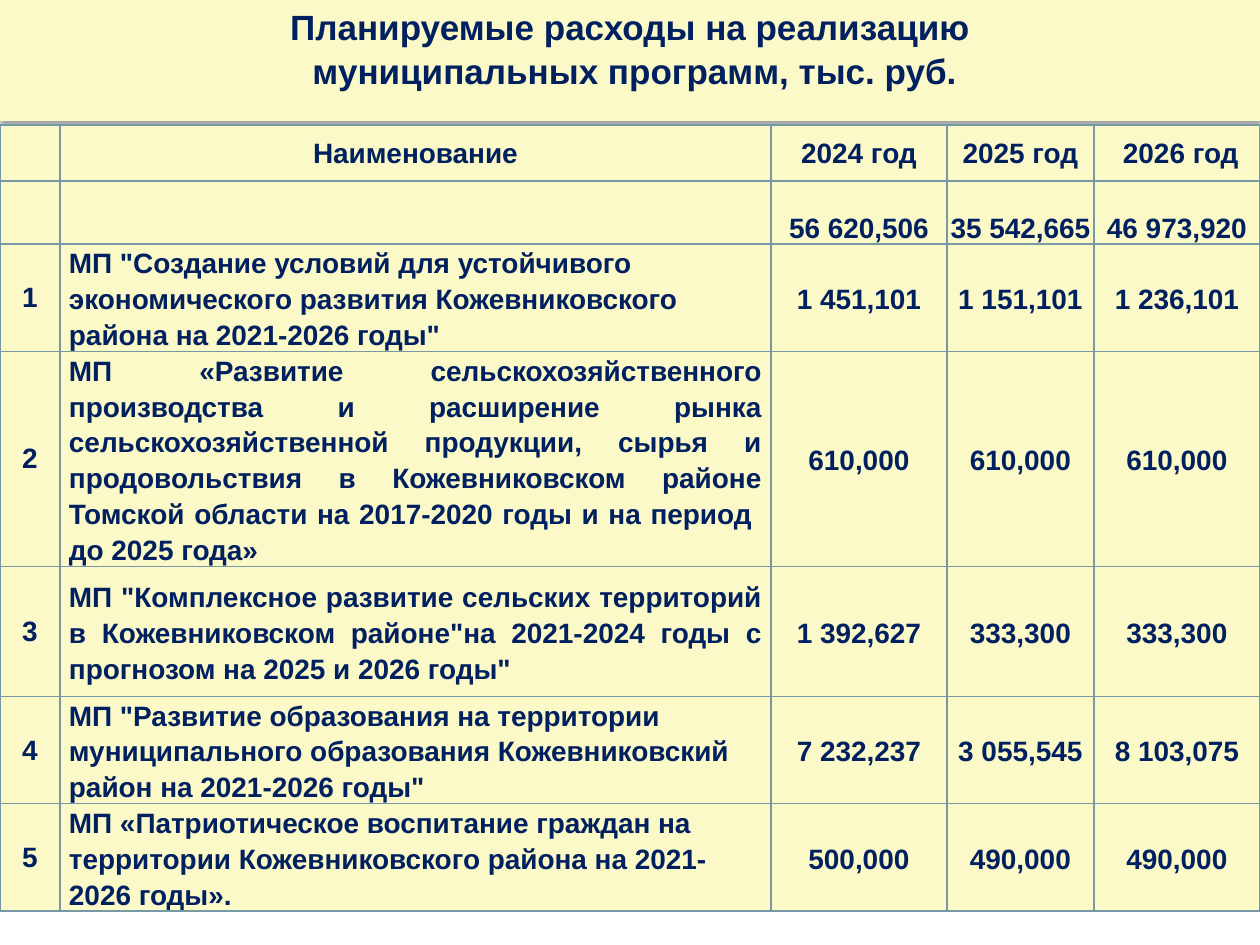
from lxml.etree import SubElement
from pptx import Presentation
from pptx.dml.color import RGBColor
from pptx.enum.text import MSO_ANCHOR, MSO_AUTO_SIZE, PP_ALIGN
from pptx.oxml import parse_xml
from pptx.oxml.ns import nsdecls, qn
from pptx.util import Pt

HUE = {"cream": "FCF9C8", "navy": "002060", "edge": "759AA5", "black": "000000"}
SCALE = 914400 / 126


def px(n):
    return round(n * SCALE)


def write(para, text, size, align, space=None):
    para.alignment = align
    if space:
        para.line_spacing = space
    run = para.add_run()
    run.text = text
    run.font.name = "Arial"
    run.font.size = Pt(size)
    run.font.bold = True
    run.font.color.rgb = RGBColor.from_string(HUE["navy"])


deck = Presentation()
deck.slide_width, deck.slide_height = px(1260), px(945)
slide = deck.slides.add_slide(deck.slide_layouts[5])

title = slide.shapes.title
title.left, title.top, title.width, title.height = px(0), px(-4), px(1260), px(125)
title.fill.solid()
title.fill.fore_color.rgb = RGBColor.from_string(HUE["cream"])
title._element.spPr.append(parse_xml(
    f'<a:effectLst {nsdecls("a")}>'
    f'<a:outerShdw blurRad="{Pt(3.1)}" dist="{Pt(2)}" dir="5400000" rotWithShape="0">'
    f'<a:srgbClr val="{HUE["black"]}"><a:alpha val="38000"/></a:srgbClr>'
    '</a:outerShdw></a:effectLst>'))
frame = title.text_frame
frame.auto_size = MSO_AUTO_SIZE.NONE
frame.vertical_anchor = MSO_ANCHOR.TOP
frame.margin_top = px(7)
lines = ["Планируемые расходы на реализацию", " муниципальных программ, тыс. руб."]
for i, line in enumerate(lines):
    para = frame.add_paragraph() if i else frame.paragraphs[0]
    write(para, line, 20, PP_ALIGN.CENTER, 1.05)

rows = [
    ["", "Наименование", "2024 год", "2025 год", " 2026 год"],
    ["", "", "56 620,506", "35 542,665", "46 973,920"],
    ["1", "МП \"Создание условий для устойчивого экономического развития "
     "Кожевниковского района на 2021-2026 годы\"",
     "1 451,101", "1 151,101", "1 236,101"],
    ["2", "МП «Развитие сельскохозяйственного производства и расширение рынка "
     "сельскохозяйственной продукции, сырья и продовольствия в Кожевниковском "
     "районе Томской области на 2017-2020 годы и на период  до 2025 года»",
     "610,000", "610,000", "610,000"],
    ["3", "МП \"Комплексное развитие сельских территорий в Кожевниковском "
     "районе\"на 2021-2024 годы с прогнозом на 2025 и 2026 годы\"",
     "1 392,627", "333,300", "333,300"],
    ["4", "МП \"Развитие образования на территории муниципального образования "
     "Кожевниковский район на 2021-2026 годы\"",
     "7 232,237", "3 055,545", "8 103,075"],
    ["5", "МП «Патриотическое воспитание граждан на территории "
     "Кожевниковского района на 2021-2026 годы».",
     "500,000", "490,000", "490,000"],
]
wide = [60, 711, 176, 147, 166]
high = [56, 63, 107, 215, 130, 107, 107]
grid = slide.shapes.add_table(len(rows), len(wide), px(0), px(125),
                              px(sum(wide)), px(sum(high))).table
grid.first_row = False
grid.horz_banding = False
for col, width in zip(grid.columns, wide):
    col.width = px(width)
for row, height in zip(grid.rows, high):
    row.height = px(height)

for r, row in enumerate(rows):
    for c, text in enumerate(row):
        cell = grid.cell(r, c)
        body = r > 1 and c > 0
        cell.margin_left = cell.margin_right = px(9 if body else 1)
        cell.margin_top = px(0 if body else 1)
        cell.margin_bottom = px(0)
        cell.vertical_anchor = MSO_ANCHOR.BOTTOM if r == 1 else MSO_ANCHOR.MIDDLE
        if text:
            align = PP_ALIGN.CENTER
            if body and c == 1:
                align = PP_ALIGN.JUSTIFY if row[0] in ("2", "3") else PP_ALIGN.LEFT
            write(cell.text_frame.paragraphs[0], text, 16, align, 1.15 if body else None)
        props = cell._tc.get_or_add_tcPr()
        for side in ("a:lnL", "a:lnR", "a:lnT", "a:lnB"):
            edge = SubElement(props, qn(side), w=str(Pt(1)))
            SubElement(SubElement(edge, qn("a:solidFill")), qn("a:srgbClr"), val=HUE["edge"])
        cell.fill.solid()
        cell.fill.fore_color.rgb = RGBColor.from_string(HUE["cream"])

deck.save("out.pptx")
